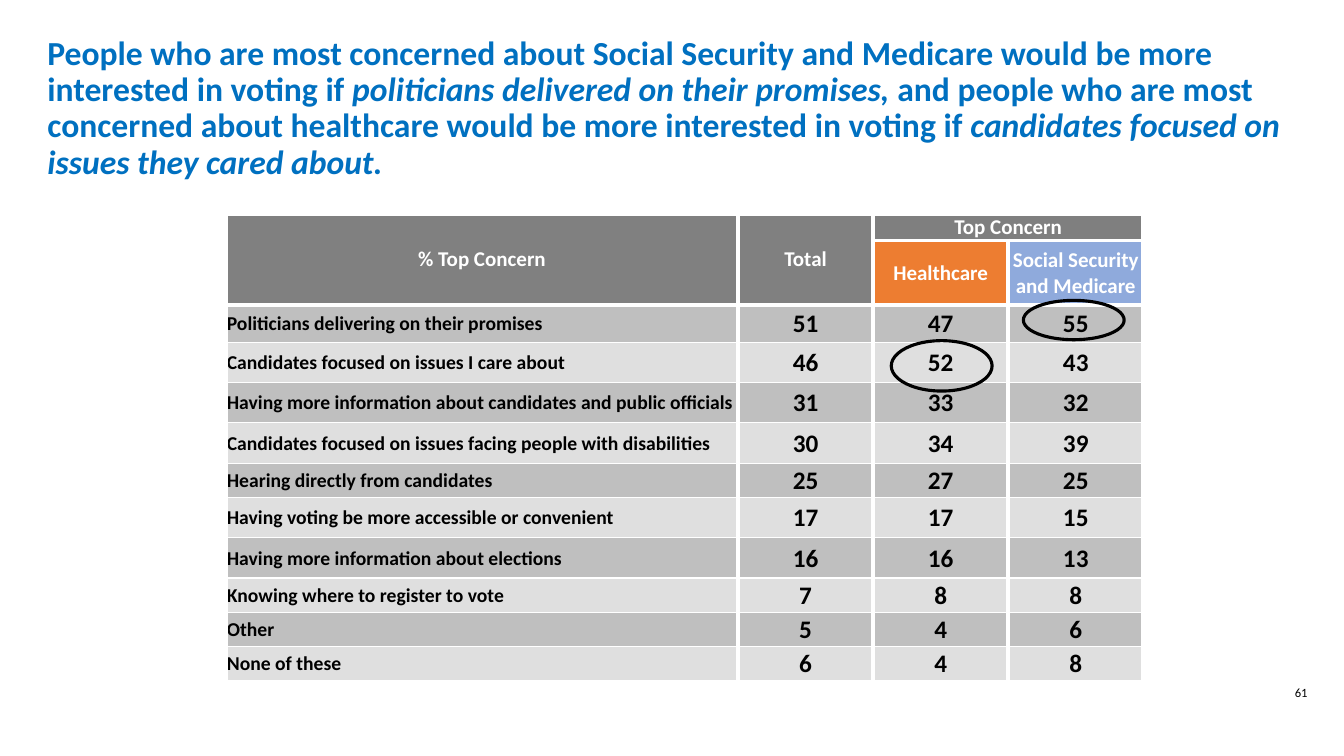
"""Build a slide with a table of voting motivators split by top concern."""
from dataclasses import dataclass
from typing import Any

from lxml.etree import SubElement
from pptx import Presentation
from pptx.dml.color import RGBColor
from pptx.enum.shapes import MSO_SHAPE as Shape
from pptx.enum.text import MSO_ANCHOR as Anchor, MSO_AUTO_SIZE as AutoSize, PP_ALIGN as Align
from pptx.oxml.ns import qn
from pptx.util import Inches, Pt

WHITE = RGBColor(0xFF, 0xFF, 0xFF)
BLACK = RGBColor(0, 0, 0)
BLUE = RGBColor(0x00, 0x70, 0xC0)
HEADER_GREY = RGBColor(0x80, 0x80, 0x80)
GROUP_GREY = RGBColor(0x7F, 0x7F, 0x7F)
ORANGE = RGBColor(0xED, 0x7D, 0x31)
PERIWINKLE = RGBColor(0x8F, 0xAA, 0xDC)
BANDS = (RGBColor(0xBF, 0xBF, 0xBF), RGBColor(0xDF, 0xDF, 0xDF))

TITLE_FORMAT = {"name": "Calibri", "size": Pt(24), "bold": True}
HEADER_FORMAT = {"name": "Calibri", "size": Pt(15), "bold": True}
LABEL_FORMAT = {"name": "Calibri", "size": Pt(14), "bold": True}
VALUE_FORMAT = {"name": "Calibri", "size": Pt(18), "bold": True}
NUMBER_FORMAT = {"name": "Calibri", "size": Pt(9)}
CELL_FORMAT = {
    "vertical_anchor": Anchor.MIDDLE,
    "margin_left": Inches(0.01),
    "margin_right": Inches(0.01),
    "margin_top": Inches(0.01),
    "margin_bottom": 0,
}


@dataclass
class Span:
    text: str
    italic: bool = False


@dataclass
class Header:
    text: str
    row: int
    column: int
    fill: RGBColor
    last_row: int
    last_column: int


@dataclass
class Answer:
    label: str
    values: tuple[int, int, int]
    height: float


@dataclass
class Ring:
    left: float
    top: float
    width: float
    height: float


TITLE = [
    Span("People who are most concerned about Social Security and Medicare "
         "would be more interested in voting if "),
    Span("politicians delivered on their promises, ", True),
    Span("and people who are most concerned about healthcare "
         "would be more interested in voting if "),
    Span("candidates focused on issues they cared about.", True),
]
COLUMN_WIDTHS = (5.08, 1.34, 1.34, 1.34)
HEADER_HEIGHTS = (0.23, 0.64)
HEADERS = [
    Header("% Top Concern", 0, 0, HEADER_GREY, 1, 0),
    Header("Total", 0, 1, HEADER_GREY, 1, 1),
    Header("Top Concern", 0, 2, GROUP_GREY, 0, 3),
    Header("Healthcare", 1, 2, ORANGE, 1, 2),
    Header("Social Security and Medicare", 1, 3, PERIWINKLE, 1, 3),
]
ANSWERS = [
    Answer("Politicians delivering on their promises", (51, 47, 55), 0.37),
    Answer("Candidates focused on issues I care about", (46, 52, 43), 0.4),
    Answer("Having more information about candidates and public officials", (31, 33, 32), 0.4),
    Answer("Candidates focused on issues facing people with disabilities", (30, 34, 39), 0.4),
    Answer("Hearing directly from candidates", (25, 27, 25), 0.34),
    Answer("Having voting be more accessible or convenient", (17, 17, 15), 0.4),
    Answer("Having more information about elections", (16, 16, 13), 0.4),
    Answer("Knowing where to register to vote", (7, 8, 8), 0.34),
    Answer("Other", (5, 4, 6), 0.34),
    Answer("None of these", (6, 4, 8), 0.34),
]
RINGS = [Ring(10.15, 2.98, 1, 0.39), Ring(8.84, 3.38, 1, 0.5)]


def apply_format(target: Any, values: dict[str, Any]) -> None:
    """Set each named attribute on the target."""
    for name, value in values.items():
        setattr(target, name, value)


def write(para: Any, text: str, values: dict[str, Any], color: RGBColor, align: Any) -> Any:
    """Add one formatted run to a paragraph and return it."""
    para.alignment = align
    span = para.add_run()
    span.text = text
    apply_format(span.font, values)
    span.font.color.rgb = color
    return span


def style_cell(cell: Any, fill: RGBColor, rule_width: float) -> None:
    """Give a cell white borders, a fill, margins and an anchor."""
    properties = cell._tc.get_or_add_tcPr()
    for side, width in (("L", 3), ("R", 3), ("T", rule_width), ("B", rule_width)):
        border = SubElement(properties, qn(f"a:ln{side}"), w=str(Pt(width)))
        SubElement(SubElement(border, qn("a:solidFill")), qn("a:srgbClr"), val=str(WHITE))
    cell.fill.solid()
    cell.fill.fore_color.rgb = fill
    apply_format(cell, CELL_FORMAT)


def add_title(page: Any) -> None:
    """Fill the title placeholder."""
    title = page.shapes.title
    apply_format(title, {"left": Inches(0.37), "top": Inches(0.42),
                         "width": Inches(12.6), "height": Inches(1.32)})
    apply_format(title.text_frame, {"vertical_anchor": Anchor.MIDDLE, "word_wrap": True,
                                    "auto_size": AutoSize.NONE})
    para = title.text_frame.paragraphs[0]
    para.line_spacing = 0.9
    for part in TITLE:
        span = write(para, part.text, TITLE_FORMAT, BLUE, Align.LEFT)
        span.font.italic = part.italic


def add_concern_table(page: Any) -> None:
    """Draw the table with its two header rows and its answers."""
    heights = [*HEADER_HEIGHTS, *(answer.height for answer in ANSWERS)]
    table = page.shapes.add_table(
        len(heights), len(COLUMN_WIDTHS), Inches(2.24), Inches(2.12),
        Inches(sum(COLUMN_WIDTHS)), Inches(sum(heights))).table
    apply_format(table, {"first_row": False, "horz_banding": False})
    for column, width in zip(table.columns, COLUMN_WIDTHS):
        column.width = Inches(width)
    for row, height in zip(table.rows, heights):
        row.height = Inches(height)

    for header in HEADERS:
        for row in range(header.row, header.last_row + 1):
            for column in range(header.column, header.last_column + 1):
                style_cell(table.cell(row, column), header.fill, 3)
        cell = table.cell(header.row, header.column)
        last = table.cell(header.last_row, header.last_column)
        if (header.row, header.column) != (header.last_row, header.last_column):
            cell.merge(last)
        write(cell.text_frame.paragraphs[0], header.text, HEADER_FORMAT, WHITE, Align.CENTER)

    for index, answer in enumerate(ANSWERS):
        for column, content in enumerate((answer.label, *answer.values)):
            cell = table.cell(index + len(HEADER_HEIGHTS), column)
            style_cell(cell, BANDS[index % 2], 1)
            values, align = (VALUE_FORMAT, Align.CENTER) if column else (LABEL_FORMAT, Align.LEFT)
            write(cell.text_frame.paragraphs[0], str(content), values, BLACK, align)


def add_ring(page: Any, ring: Ring) -> None:
    """Draw an unfilled ellipse around a leading value."""
    ellipse = page.shapes.add_shape(Shape.OVAL, Inches(ring.left), Inches(ring.top),
                                    Inches(ring.width), Inches(ring.height))
    ellipse.shadow.inherit = False
    ellipse.fill.background()
    ellipse.line.color.rgb = BLACK
    ellipse.line.width = Pt(2.25)


def add_page_number(page: Any) -> None:
    """Write the page number at the lower right."""
    box = page.shapes.add_textbox(Inches(12.53), Inches(6.75), Inches(0.75), Inches(0.33))
    box.text_frame.word_wrap = True
    write(box.text_frame.paragraphs[0], "61", NUMBER_FORMAT, BLACK, Align.CENTER)


def main() -> None:
    """Build and save the deck."""
    deck = Presentation()
    apply_format(deck, {"slide_width": Inches(13.33), "slide_height": Inches(7.5)})
    page = deck.slides.add_slide(deck.slide_layouts.get_by_name("Title Only"))
    add_title(page)
    add_concern_table(page)
    for ring in RINGS:
        add_ring(page, ring)
    add_page_number(page)
    deck.save("out.pptx")


if __name__ == "__main__":
    main()
